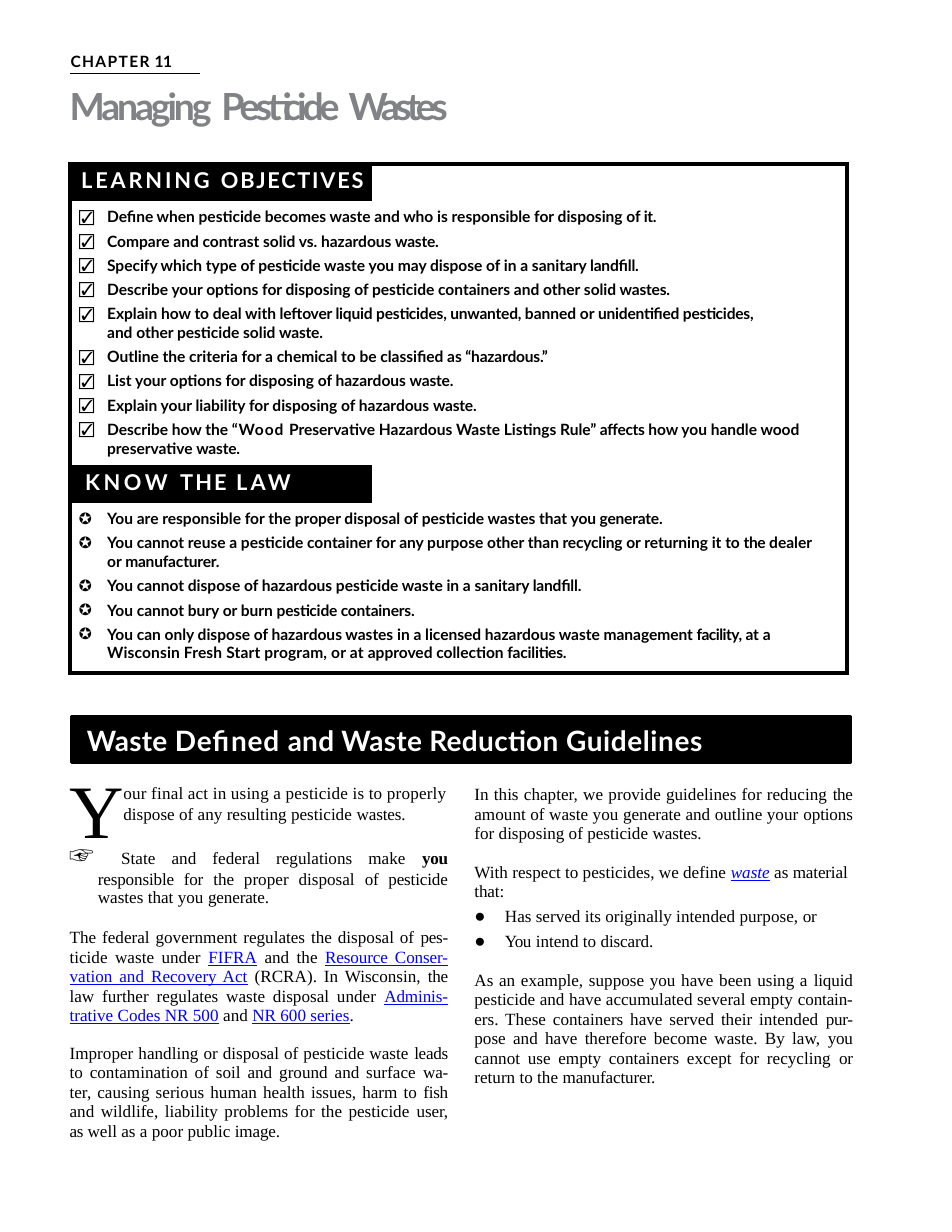
"""Build the opening page of a chapter on managing pesticide wastes."""
from dataclasses import dataclass

from lxml.etree import SubElement
from pptx import Presentation
from pptx.dml.color import RGBColor
from pptx.enum.shapes import MSO_CONNECTOR, MSO_SHAPE
from pptx.enum.text import MSO_ANCHOR, MSO_AUTO_SIZE, PP_ALIGN
from pptx.oxml.ns import qn
from pptx.util import Cm, Pt


@dataclass(frozen=True)
class Theme:
    black: str = "000000"
    white: str = "FFFFFF"
    gray: str = "808285"
    blue: str = "0000FF"
    sans: str = "Lato"
    serif: str = "Times New Roman"
    symbol: str = "Noto Sans CJK JP"
    bullet: str = "Arial"


theme = Theme()
STYLES = {
    "chapter": dict(font=theme.sans, size=10, color=theme.black, bold=True),
    "title": dict(font=theme.sans, size=24, color=theme.gray, bold=True),
    "heading": dict(font=theme.sans, size=14, color=theme.white, bold=True),
    "banner": dict(font=theme.sans, size=18, color=theme.white, bold=True),
    "point": dict(font=theme.sans, size=10, color=theme.black, bold=True),
    "initial": dict(font=theme.serif, size=48.5, color=theme.black),
    "body": dict(font=theme.serif, size=11, color=theme.black),
    "strong": dict(font=theme.serif, size=11, color=theme.black, bold=True),
    "link": dict(font=theme.serif, size=11, color=theme.blue, underline=True),
    "term": dict(font=theme.serif, size=11, color=theme.blue, underline=True, italic=True),
    "hand": dict(font=theme.symbol, size=16, color=theme.black),
}


def write_para(para, style, pieces, before=2, line=None, align=PP_ALIGN.LEFT,
               left=0, hanging=0, bullet=None, bullet_size=100):
    """Write strings or (text, spacing, style) pieces into a paragraph."""
    para.alignment = align
    para.space_before = Pt(before)
    if line:
        para.line_spacing = line
    properties = para._p.get_or_add_pPr()
    properties.set("marL", str(Cm(left)))
    properties.set("indent", str(Cm(-hanging)))
    if bullet:
        SubElement(properties, qn("a:buSzPct")).set("val", str(bullet_size * 1000))
        SubElement(properties, qn("a:buFont")).set("typeface", theme.bullet)
        SubElement(properties, qn("a:buChar")).set("char", bullet)
    else:
        SubElement(properties, qn("a:buNone"))
    for piece in pieces:
        if piece == "\n":
            para.add_line_break()
            continue
        text, spacing, *names = (piece, 0) if isinstance(piece, str) else piece
        look = STYLES[names[0] if names else style]
        span = para.add_run()
        span.text = text
        span.font.name = look["font"]
        span.font.size = Pt(look["size"])
        span.font.color.rgb = RGBColor.from_string(look["color"])
        span.font.bold = look.get("bold", False)
        span.font.italic = look.get("italic", False)
        span.font.underline = look.get("underline", False)
        span._r.get_or_add_rPr().set("spc", str(round(spacing * 100)))


def prepare_frame(box, left, top, width, height, inset=0.03):
    """Place a text shape and return its frame, with tight margins."""
    box.left, box.top, box.width, box.height = Cm(left), Cm(top), Cm(width), Cm(height)
    frame = box.text_frame
    frame.word_wrap = True
    frame.auto_size = MSO_AUTO_SIZE.NONE
    frame.vertical_anchor = MSO_ANCHOR.TOP
    frame.margin_left, frame.margin_top = Cm(0.03), Cm(inset)
    frame.margin_right = frame.margin_bottom = 0
    return frame


deck = Presentation()
deck.slide_width, deck.slide_height = Cm(21.59), Cm(27.94)
slide = deck.slides.add_slide(deck.slide_layouts[1])
shapes = slide.shapes

title = prepare_frame(shapes.title, 1.55, 1.85, 18.49, 1.09)
write_para(title.paragraphs[0], "title",
           [("Managing", -2), (" ", 0.6), ("Pesticide", -2.6), " ", ("Wastes", -3)], before=1)

rule = shapes.add_connector(MSO_CONNECTOR.STRAIGHT, Cm(1.59), Cm(1.67), Cm(4.53), Cm(1.67))
rule.line.color.rgb = RGBColor.from_string(theme.black)
rule.line.width = Pt(1)
SubElement(rule._element.spPr, qn("a:effectLst"))

objectives = [
    ["Define when pesticide becomes waste and who is responsible for disposing of ", ("it.", -0.2)],
    ["Compare and contrast solid vs. hazardous ", ("waste.", -0.1)],
    ["Specify which type of pesticide waste you may dispose of in a sanitary ", ("landfill.", -0.1)],
    ["Describe your options for disposing of pesticide containers and other solid ", ("wastes.", -0.1)],
    ["Explain how to deal with ", ("leftover liquid pesticides, unwanted, ", -0.1), "banned or ",
     ("unidentified pesticides,", -0.1), "\n", "and other pesticide solid ", ("waste.", -0.1)],
    ["Outline the criteria for a chemical to be classified as", (" “hazardous.”", -0.1)],
    ["List your options for disposing of hazardous ", ("waste.", -0.1)],
    ["Explain your liability for disposing of hazardous ", ("waste.", -0.1)],
    ["Describe how the ", ("“Wood ", 0.6), "Preservative Hazardous Waste Listings Rule” ",
     ("affects ", -0.2), "how you handle wood preservative ", ("waste.", -0.1)],
]
laws = [
    ["You are responsible for the proper disposal of pesticide wastes that you ", ("generate.", -0.1)],
    ["You cannot reuse a pesticide container for any purpose other than ", ("recycling", -0.1),
     " or returning it to ", ("the ", -0.2), "dealer or ", ("manufacturer.", -0.1)],
    ["You cannot dispose of hazardous pesticide waste in a sanitary ", ("landfill.", -0.1)],
    ["You cannot bury or burn ", ("pesticide containers.", -0.1)],
    ["You can only dispose of hazardous wastes in a licensed hazardous waste management ",
     ("facility, ", -0.3), "at ", ("a ", -0.5), ("Wisconsin Fresh Start program, or at ", 0.1),
     "approved collection ", ("facilities.", -0.1)],
]
table = shapes.add_table(4, 2, Cm(1.59), Cm(3.72), Cm(17.61), Cm(11.52)).table
table.first_row = table.horz_banding = False
table._tbl.tblPr.find(qn("a:tableStyleId")).text = "{2D5ABB26-0587-4C30-8999-92F81FD0307C}"
for column, width in zip(table.columns, (6.84, 10.77)):
    column.width = Cm(width)
for row, height in zip(table.rows, (0.83, 5.97, 0.87, 3.85)):
    row.height = Cm(height)
for row_index, inset in enumerate((0.07, 0.14, 0.1, 0.14)):
    merged = row_index in (1, 3)
    if merged:
        table.cell(row_index, 0).merge(table.cell(row_index, 1))
    for column_index in range(2):
        cell = table.cell(row_index, column_index)
        cell.margin_left = cell.margin_bottom = 0
        cell.margin_right = Cm(0.55) if merged else 0
        cell.margin_top = Cm(inset)
        cell.fill.solid()
        cell.fill.fore_color.rgb = RGBColor.from_string(
            theme.white if merged or column_index else theme.black)
        edges = {"a:lnL": column_index == 0, "a:lnR": merged or column_index == 1,
                 "a:lnT": row_index == 0, "a:lnB": row_index == 3}
        properties = cell._tc.get_or_add_tcPr()
        for position, edge in enumerate(name for name, shown in edges.items() if shown):
            border = SubElement(properties, qn(edge), w=str(Pt(3)))
            SubElement(SubElement(border, qn("a:solidFill")), qn("a:srgbClr"), val=theme.black)
            properties.insert(position, border)

write_para(table.cell(0, 0).text_frame.paragraphs[0], "heading",
           [("LEARNING ", 1.8), ("OBJECTIVES", 1.1)], before=1.9, left=0.25)
write_para(table.cell(2, 0).text_frame.paragraphs[0], "heading",
           [("KNOW ", 2.3), ("THE ", 1.3), ("LAW", 2)], before=3.4, left=0.34)
for row_index, mark, points in ((1, "☑", objectives), (3, "✪", laws)):
    frame = table.cell(row_index, 0).text_frame
    for index, pieces in enumerate(points):
        para = frame.add_paragraph() if index else frame.paragraphs[0]
        write_para(para, "point", pieces, before=3.6 if index else 4.4,
                   left=0.84, hanging=0.64, bullet=mark)

banner = shapes.add_shape(MSO_SHAPE.RECTANGLE, 0, 0, 0, 0)
banner.shadow.inherit = False
banner.fill.solid()
banner.fill.fore_color.rgb = RGBColor.from_string(theme.black)
banner.line.color.rgb = RGBColor.from_string(theme.black)
banner.line.width = Pt(2)
frame = prepare_frame(banner, 1.63, 16.26, 17.65, 1.04, 0)
frame.vertical_anchor = MSO_ANCHOR.MIDDLE
write_para(frame.paragraphs[0], "banner",
           [("Waste ", 0.2), ("Defined ", 0.5), ("and Waste Reduction ", 0.2), ("Guidelines", 0.4)],
           before=0, left=0.31)

exact = dict(line=Pt(12.5), align=PP_ALIGN.JUSTIFY)
passages = [
    ((1.57, 1.14, 2.7, 0.48), "chapter", [("CHAPTER", 0.9), (" 11", -0.2)], dict(before=1)),
    ((1.54, 17.25, 1.32, 2.13, 0.05), "initial", [("Y", -0.5)], dict(before=1.2)),
    ((2.77, 17.72, 7.6, 1), "body",
     [("our final act in using a pesticide is to properly ", 0.12),
      "dispose of any resulting pesticide ", ("wastes.", -0.1)], dict(before=1)),
    ((1.55, 19.02, 8.61, 1.6, 0.1), "body",
     [("☞ ", 3, "hand"), "State and federal regulations make ", ("you ", -0.2, "strong"),
      ("responsible for", -0.1), " the proper disposal ", ("of pesticide", -0.1),
      " wastes that you ", ("generate.", -0.1)],
     dict(before=2.6, line=0.91, align=PP_ALIGN.JUSTIFY, left=0.64, hanging=0.64)),
    ((1.55, 20.96, 8.61, 2.31, 0.08), "body",
     ["The federal government regulates the disposal of ", ("pes- ", -0.2), "ticide waste under ",
      ("FIFRA", 0, "link"), " and the ", ("Resource Conser-", -0.1, "link"), " ",
      ("vation and Recovery Act", 0, "link"), " (RCRA). In Wisconsin, ", ("the ", -0.2),
      "law further regulates waste disposal under ", ("Adminis-", -0.1, "link"), " ",
      ("trative Codes NR 500", 0, "link"), " and ", ("NR 600 series", 0, "link"), "."], exact),
    ((1.55, 23.58, 8.61, 2.31, 0.08), "body",
     ["Improper handling or disposal of pesticide waste ", ("leads ", -0.2),
      "to contamination of soil and ground and surface ", ("wa- ", -0.2),
      "ter, causing serious human health issues, harm to ", ("fish ", -0.2),
      "and wildlife, liability problems for the pesticide ", ("user, ", -0.1), ("as ", -0.2),
      "well as a poor public", (" image.", -0.1)], exact),
    ((10.73, 17.72, 8.61, 1.42, 0.08), "body",
     ["In this chapter, we provide guidelines for reducing ", ("the ", -0.2),
      "amount of waste you generate and outline your ", ("options ", -0.1),
      "for disposing of pesticide", (" wastes.", -0.1)], exact),
    ((10.73, 21.93, 8.61, 2.74, 0.08), "body",
     ["As an example, suppose you have been using a ", ("liquid ", -0.1),
      "pesticide and have accumulated several empty ", ("contain- ", -0.1),
      "ers. These containers have served their intended ", ("pur- ", -0.2),
      "pose and have therefore become waste. By law, ", ("you ", -0.2),
      "cannot use empty containers except for recycling ", ("or ", -0.2),
      "return to the ", ("manufacturer.", -0.1)], exact),
]
for place, style, pieces, layout in passages:
    frame = prepare_frame(shapes.add_textbox(0, 0, 0, 0), *place)
    write_para(frame.paragraphs[0], style, pieces, **layout)

definition = prepare_frame(slide.placeholders[1], 10.73, 19.48, 8.61, 2.13, 0.08)
write_para(definition.paragraphs[0], "body",
           ["With respect to pesticides, we define ", ("waste", 0, "term"), " as ",
            ("material that:", -0.1)], line=Pt(12.5))
for before, pieces in (
        (2.6, ["Has served its originally intended purpose, ", ("or", -0.2)]),
        (2.9, [("You", -0.4), " intend to ", ("discard.", -0.1)])):
    write_para(definition.add_paragraph(), "body", pieces, before=before,
               left=0.69, hanging=0.69, bullet="●", bullet_size=109)

deck.save("out.pptx")
